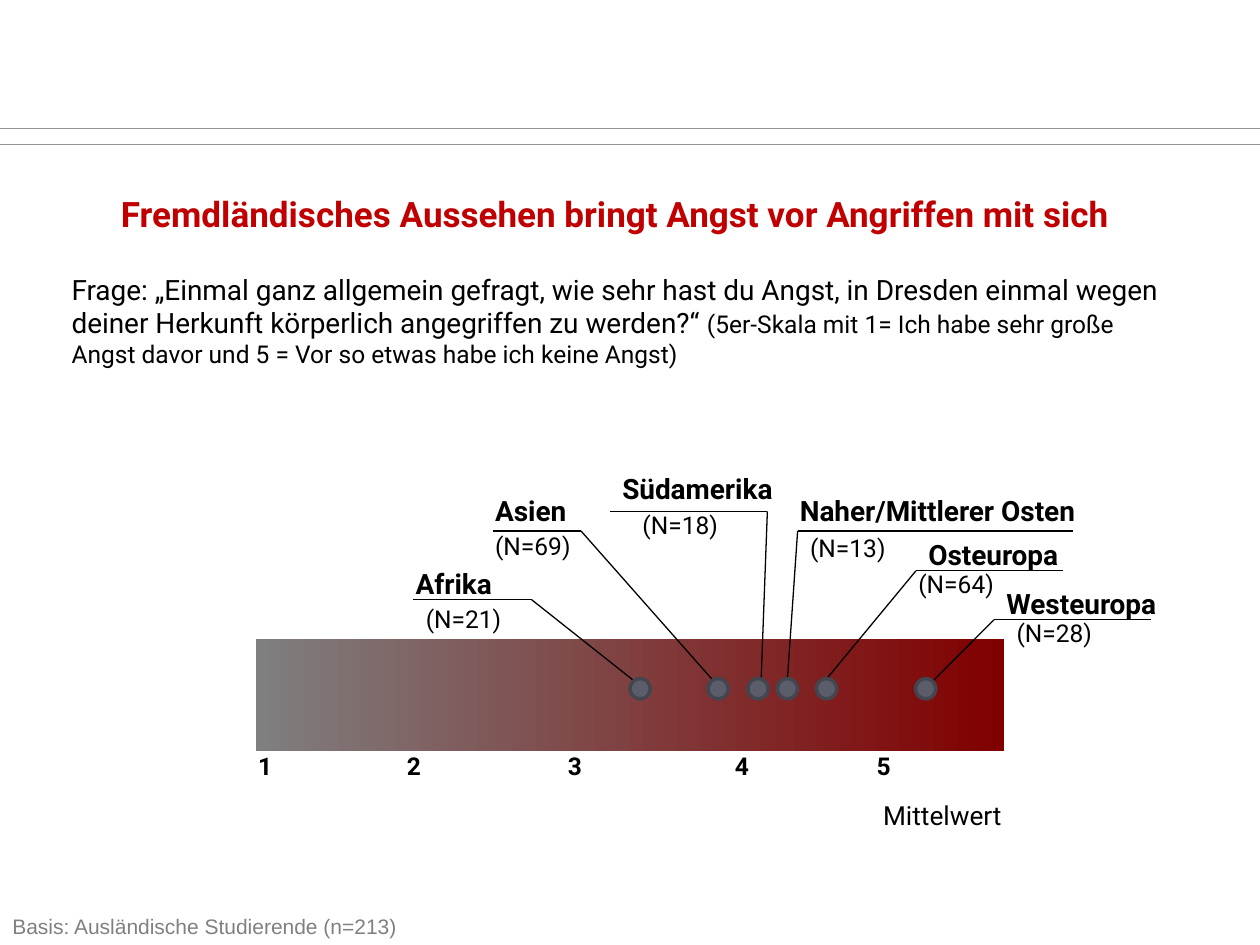
from lxml import etree
from pptx import Presentation
from pptx.dml.color import RGBColor
from pptx.enum import shapes, text
from pptx.oxml import ns
from pptx.util import Pt

BLACK = RGBColor(0x00, 0x00, 0x00)
RED = RGBColor(0xC0, 0x00, 0x00)
DARK_RED = RGBColor(0x80, 0x00, 0x00)
GRAY = RGBColor(0x80, 0x80, 0x80)
SCALE_GRAY = RGBColor(0x7F, 0x7F, 0x7F)
RULE_GRAY = RGBColor(0x96, 0x96, 0x96)
DOT_FILL = RGBColor(0x5B, 0x5D, 0x6B)
DOT_LINE = RGBColor(0x43, 0x45, 0x4F)

TITLE = "Fremdländisches Aussehen bringt Angst vor Angriffen mit sich"
QUESTION = (
    "Frage: „Einmal ganz allgemein gefragt, wie sehr hast du Angst, in Dresden "
    "einmal wegen deiner Herkunft körperlich angegriffen zu werden?“ "
)
SCALE_NOTE = (
    "(5er-Skala mit 1= Ich habe sehr große Angst davor und "
    "5 = Vor so etwas habe ich keine Angst)"
)
BASIS = "Basis: Ausländische Studierende (n=213)"

# name, count, dot centre x, name left/top/width, count left/top, leader points
REGIONS = [
    ("Afrika", 21, 365.8, (230.4, 320.4, 73), (236.2, 341.5),
     [(236.2, 342.7), (303.8, 342.7), (362, 388.8)]),
    ("Asien", 69, 410.4, (275.8, 278.6, 62), (275.8, 300),
     [(281.5, 303.4), (332, 303.4), (412.6, 394.6)]),
    ("Südamerika", 18, 433.2, (348.5, 265.7, 112), (360, 288),
     [(348.5, 292.3), (438.5, 292.3), (434.9, 389.5)]),
    ("Naher/Mittlerer Osten", 13, 450, (450, 278.6, 236), (455.8, 301),
     [(613.4, 303.4), (455.8, 303.4), (450, 387.4)]),
    ("Osteuropa", 64, 472.3, (523.4, 303.4, 130), (517.7, 321.5),
     [(607.7, 326.2), (523.4, 326.2), (472.3, 388)]),
    ("Westeuropa", 28, 529, (568, 331.4, 118), (573.8, 349.7),
     [(658, 354.2), (568, 354.2), (532.8, 389.5)]),
]
SCALE_TABS = [85, 177, 272.4, 353.5]
DOT_SIZE, DOT_Y = 11.5, 393.6

presentation = Presentation()
presentation.slide_width, presentation.slide_height = Pt(720), Pt(540)
slide = presentation.slides.add_slide(presentation.slide_layouts[5])


def add_run(paragraph, words, size, color=BLACK, bold=False, font="Roboto"):
    run = paragraph.add_run()
    run.text = words
    run.font.name, run.font.size, run.font.bold = font, Pt(size), bold
    run.font.color.rgb = color


def add_text(words, left, top, width, height, *, shape=None, size=14,
             align=text.PP_ALIGN.LEFT, tabs=(), **run_format):
    """Write one paragraph into a new text box or the given placeholder."""
    box = [Pt(length) for length in (left, top, width, height)]
    if shape is None:
        shape = slide.shapes.add_textbox(*box)
    else:
        shape.left, shape.top, shape.width, shape.height = box
    frame = shape.text_frame
    frame.word_wrap = True
    frame.auto_size = text.MSO_AUTO_SIZE.NONE
    frame.vertical_anchor = text.MSO_ANCHOR.TOP
    paragraph = frame.paragraphs[0]
    paragraph.alignment = align
    if tabs:
        properties = paragraph._p.get_or_add_pPr()
        tab_list = etree.SubElement(properties, ns.qn("a:tabLst"))
        for position in tabs:
            etree.SubElement(tab_list, ns.qn("a:tab"),
                             pos=str(int(Pt(position))), algn="l")
    add_run(paragraph, words, size, **run_format)
    return paragraph


def add_line(start, end, color=BLACK, width=0.75):
    line = slide.shapes.add_connector(
        shapes.MSO_CONNECTOR.STRAIGHT, *(Pt(length) for length in (*start, *end)))
    line.line.color.rgb = color
    line.line.width = Pt(width)
    etree.SubElement(line._element.spPr, ns.qn("a:effectLst"))


def add_shape(kind, left, top, width, height):
    shape = slide.shapes.add_shape(
        kind, *(Pt(length) for length in (left, top, width, height)))
    shape.shadow.inherit = False
    return shape


for rule_y in (73.4, 82.8):
    add_line((0, rule_y), (720, rule_y), RULE_GRAY, 0.5)

add_text(TITLE, 61.9, 106.6, 648, 31.7, shape=slide.shapes.title,
         size=20, color=RED, bold=True)
question = add_text(QUESTION, 33.8, 151.9, 646.6, 63.4, size=16)
add_run(question, SCALE_NOTE, 14)

bar = add_shape(shapes.MSO_SHAPE.RECTANGLE, 146.2, 365, 427.7, 64.1)
bar.line.fill.background()
bar.fill.gradient()
bar.fill.gradient_angle = 0
for stop, color in zip(bar.fill.gradient_stops, (SCALE_GRAY, DARK_RED)):
    stop.color.rgb = color
add_text("\t".join("12345"), 140.4, 425.7, 455.8, 24, tabs=SCALE_TABS, bold=True)
add_text("Mittelwert", 388, 452.9, 191.5, 25.2, size=15,
         align=text.PP_ALIGN.RIGHT)

for name, count, dot_x, (left, top, width), count_at, leader in REGIONS:
    for start, end in zip(leader, leader[1:]):
        add_line(start, end)
    dot = add_shape(shapes.MSO_SHAPE.OVAL, dot_x - DOT_SIZE / 2,
                    DOT_Y - DOT_SIZE / 2, DOT_SIZE, DOT_SIZE)
    dot.fill.solid()
    dot.fill.fore_color.rgb = DOT_FILL
    dot.line.color.rgb = DOT_LINE
    dot.line.width = Pt(2)
    add_text(name, left, top, width, 26.6, size=16, bold=True)
    add_text(f"(N={count})", *count_at, 68, 24)

add_text(BASIS, 0, 518.4, 416, 21.6, size=12, color=GRAY, font="Arial")

presentation.save("out.pptx")
